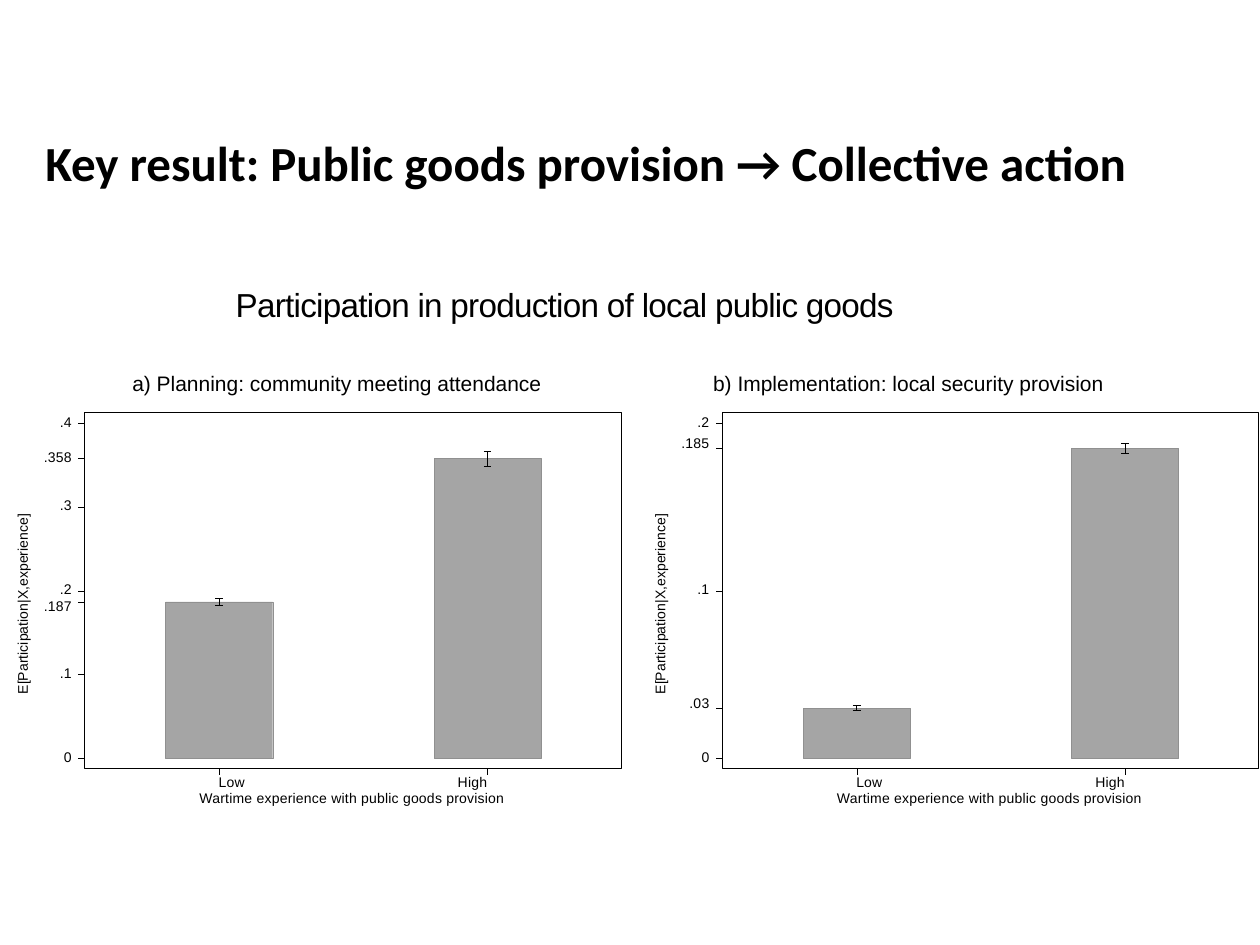
from pptx import Presentation
from pptx.dml.color import RGBColor
from pptx.enum.shapes import MSO_CONNECTOR as CONN, MSO_SHAPE as SHAPE
from pptx.enum.text import PP_ALIGN as AL
from pptx.oxml.ns import qn
from pptx.util import Inches, Pt
from lxml import etree


def add_text(text, x, y, w, h, size=8, font="Arial", color="000000",
             bold=False, align=AL.LEFT, spc=0, vert=None):
    tf = s.shapes.add_textbox(Inches(x), Inches(y), Inches(w), Inches(h)).text_frame
    tf.margin_left = tf.margin_right = tf.margin_top = tf.margin_bottom = 0
    tf.word_wrap = True
    if vert:
        tf._txBody.bodyPr.set("vert", vert)
    p = tf.paragraphs[0]
    p.alignment = align
    r = p.add_run()
    r.text = text
    r.font.size, r.font.name, r.font.bold = Pt(size), font, bold
    r.font.color.rgb = RGBColor.from_string(color)
    r._r.get_or_add_rPr().set("spc", str(spc))


def add_line(x1, y1, x2, y2, width=0.27, color="000000"):
    c = s.shapes.add_connector(CONN.STRAIGHT, Inches(x1), Inches(y1), Inches(x2), Inches(y2))
    c.line.width = Pt(width)
    c.line.color.rgb = RGBColor.from_string(color)
    etree.SubElement(c._element.spPr, qn("a:effectLst"))


prs = Presentation()
prs.slide_width, prs.slide_height = Inches(10), Inches(7.5)
s = prs.slides.add_slide(prs.slide_layouts[6])

add_text("Key result: Public goods provision → Collective action",
         0.36, 1.05, 9.06, 0.47, size=28, font="Calibri", bold=True)
add_text("Participation in production of local public goods",
         1.87, 2.26, 7, 0.3, size=19, spc=-40)

top, bottom, base, scale_h = 3.27, 6.1, 6.02, 2.66
frame_w, bar_w, cap = 4.26, 0.85, 0.03
centers = [1.07, 3.2]

panels = [
    dict(x=0.67, title="a) Planning: community meeting attendance", title_x=1.05,
         top_value=0.4, ticks=["0", ".1", ".2", ".3", ".4"],
         bars=[".187", ".358"], errors=[0.03, 0.06], shifts=[0.05, 0]),
    dict(x=5.73, title="b) Implementation: local security provision", title_x=5.66,
         top_value=0.2, ticks=["0", ".1", ".2"],
         bars=[".03", ".185"], errors=[0.02, 0.04], shifts=[-0.03, -0.03]),
]

for panel in panels:
    x = panel["x"]
    scale = scale_h / panel["top_value"]
    add_text(panel["title"], panel["title_x"], 2.94, 3.6, 0.19, size=12)

    frame = s.shapes.add_shape(SHAPE.RECTANGLE, Inches(x), Inches(top),
                               Inches(frame_w), Inches(bottom - top))
    frame.shadow.inherit = False
    frame.fill.background()
    frame.line.width = Pt(0.27)
    frame.line.color.rgb = RGBColor.from_string("000000")

    for value, center, err in zip(panel["bars"], centers, panel["errors"]):
        cx, h = x + center, float(value) * scale
        y = base - h
        bar = s.shapes.add_shape(SHAPE.RECTANGLE, Inches(cx - bar_w / 2), Inches(y),
                                 Inches(bar_w), Inches(h))
        bar.shadow.inherit = False
        bar.fill.solid()
        bar.fill.fore_color.rgb = RGBColor.from_string("A5A5A5")
        bar.line.width = Pt(0.25)
        bar.line.color.rgb = RGBColor.from_string("909090")
        add_line(cx, y + err, cx, y - err, width=0.4)
        for cap_y in (y - err, y + err):
            add_line(cx - cap, cap_y, cx + cap, cap_y, width=0.4)
        add_line(cx, bottom, cx, bottom + 0.05)

    labels = [(t, 0) for t in panel["ticks"]] + list(zip(panel["bars"], panel["shifts"]))
    for label, shift in labels:
        y = base - float(label) * scale
        add_line(x, y, x - 0.05, y)
        add_text(label, x - 0.4, y - 0.08 + shift, 0.3, 0.13, align=AL.RIGHT, spc=10)

    add_text("E[Participation|X,experience]", x - 0.56, 3.82, 0.13, 1.69, vert="vert270")
    for label, center in (("Low", 1.17), ("High", 3.08)):
        add_text(label, x + center - 0.25, 6.14, 0.5, 0.13, align=AL.CENTER, spc=10)
    add_text("Wartime experience with public goods provision",
             x + 0.75, 6.27, 2.75, 0.13, align=AL.CENTER, spc=10)

prs.save("out.pptx")
